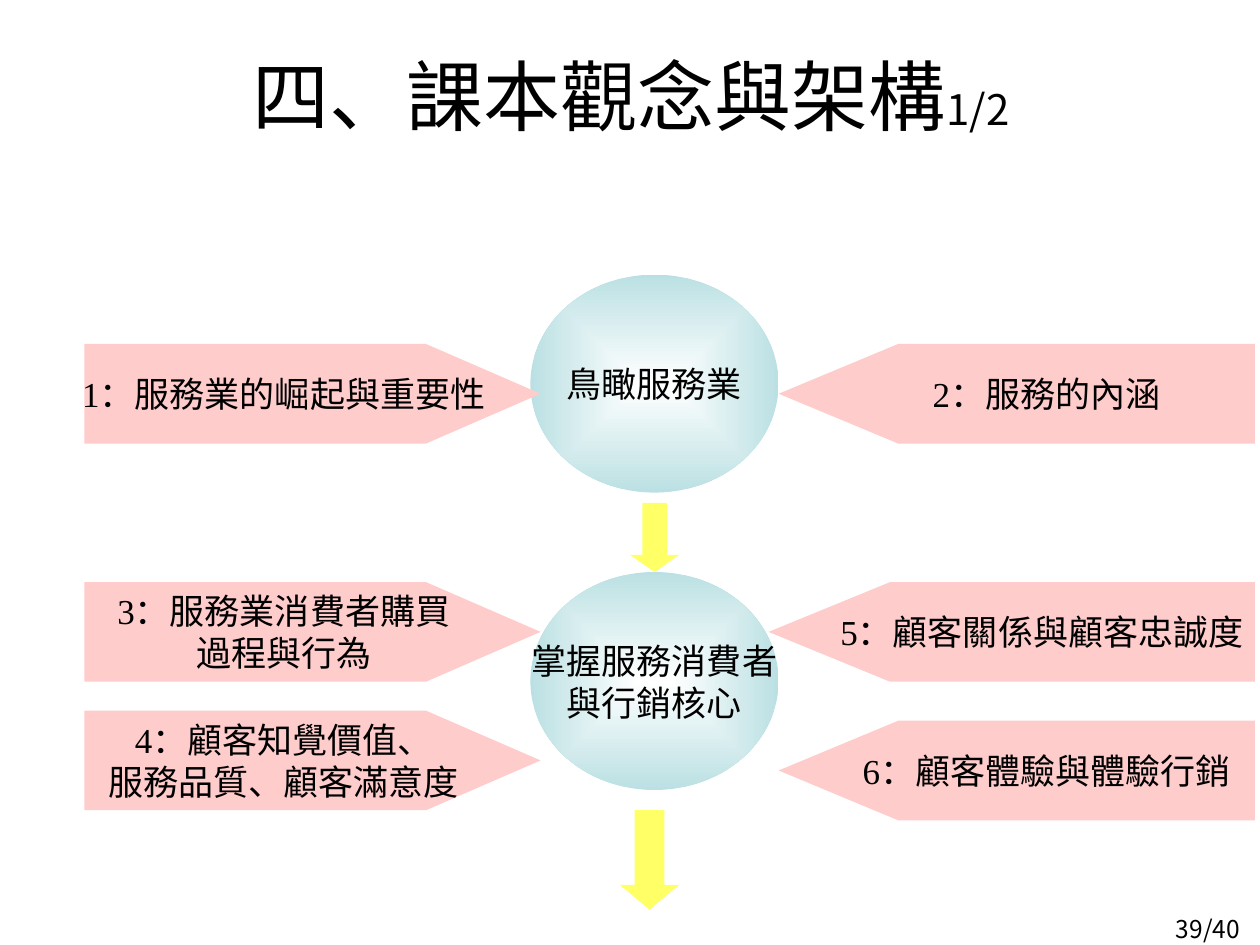
from lxml import etree
from pptx import Presentation
from pptx.dml.color import RGBColor
from pptx.enum.shapes import MSO_SHAPE
from pptx.enum.text import MSO_ANCHOR, PP_ALIGN
from pptx.oxml import parse_xml
from pptx.oxml.ns import nsdecls, qn
from pptx.util import Inches, Pt

ELLIPSE, PLATE, ARROW = MSO_SHAPE.OVAL, MSO_SHAPE.PENTAGON, MSO_SHAPE.DOWN_ARROW
CENTER, RIGHT, MIDDLE = PP_ALIGN.CENTER, PP_ALIGN.RIGHT, MSO_ANCHOR.MIDDLE

COLORS = {"ink": "000000", "core": "FFFFFF", "rim": "BBE0E3",
          "topic": "FFCCCC", "arrow": "FFFF66"}
SANS, SERIF = "Noto Sans CJK TC", "Times New Roman"
CELL = 0.1  # grid of 100 columns by 75 rows, in inches

RADIAL_PATH = (f'<a:path {nsdecls("a")} path="shape">'
               '<a:fillToRect l="50000" t="50000" r="50000" b="50000"/></a:path>')


def color(name):
    return RGBColor.from_string(COLORS[name])


class ConceptSlide:
    def __init__(self, deck):
        self.page = deck.slides.add_slide(deck.slide_layouts[6])

    def fill_text(self, box, lines, align=CENTER, wrap=False, font=SERIF):
        """Fill a box; each line is a list of (text, size) spans."""
        frame = box.text_frame
        for name, value in {"word_wrap": wrap, "vertical_anchor": MIDDLE}.items():
            setattr(frame, name, value)
        for index, spans in enumerate(lines):
            para = frame.add_paragraph() if index else frame.paragraphs[0]
            para.alignment = align
            for text, size in spans:
                span = para.add_run()
                span.text = text
                for name, value in {"name": font, "size": Pt(size)}.items():
                    setattr(span.font, name, value)
                span.font.color.rgb = color("ink")
                east_asian = etree.SubElement(span.font._element, qn("a:ea"))
                east_asian.set("typeface", SANS)

    def text(self, area, spans, align):
        box = self.page.shapes.add_textbox(*[Inches(n * CELL) for n in area])
        self.fill_text(box, [spans], align, wrap=True, font=SANS)

    def shape(self, kind, area, fill, adjustments=()):
        shape = self.page.shapes.add_shape(kind, *[Inches(n * CELL) for n in area])
        shape.shadow.inherit = False
        shape.line.fill.background()
        shape.fill.solid()
        shape.fill.fore_color.rgb = color(fill)
        for index, value in enumerate(adjustments):
            shape.adjustments[index] = value
        return shape

    def circle(self, top, *lines):
        circle = self.shape(ELLIPSE, (42.1, top, 19.7, 17.3), "rim")
        circle.fill.gradient()
        for stop, name in zip(circle.fill.gradient_stops, ("core", "rim")):
            stop.color.rgb = color(name)
        gradient = circle._element.spPr.find(qn("a:gradFill"))
        gradient.replace(gradient.find(qn("a:lin")), parse_xml(RADIAL_PATH))
        self.fill_text(circle, [[(line, 20)] for line in lines])

    def topic(self, left, right, top, point, *lines, flip=False):
        plate = self.shape(PLATE, (left, top, right - left, 7.9), "topic", [point])
        if flip:
            plate._element.spPr.find(qn("a:xfrm")).set("flipH", "1")
        self.fill_text(plate, [[(line, 20)] for line in lines])

    def left_topic(self, top, *lines):
        self.topic(6.7, 42.9, top, 1.15, *lines)

    def right_topic(self, top, line, left=61.8, point=1.2):
        self.topic(left, 99.6, top, point, line, flip=True)

    def arrow(self, area, head):
        self.shape(ARROW, area, "arrow", [0.5, head])


def main():
    deck = Presentation()
    deck.slide_width, deck.slide_height = Inches(10), Inches(7.5)
    slide = ConceptSlide(deck)

    # Page number
    slide.text((91, 72.1, 8.4, 3.2), [("39/40", 14)], RIGHT)

    # Central stages
    slide.circle(21.8, "鳥瞰服務業")
    slide.circle(45.4, "掌握服務消費者", "與行銷核心")

    # Chapters of the first stage
    slide.left_topic(27.3, "1：服務業的崛起與重要性")
    slide.right_topic(27.3, "2：服務的內涵")
    slide.arrow((50, 39.9, 3.9, 5.5), 0.35)

    # Chapters of the second stage
    slide.left_topic(46.2, "3：服務業消費者購買", "過程與行為")
    slide.left_topic(56.4, "4：顧客知覺價值、", "服務品質、顧客滿意度")
    slide.right_topic(46.2, "5：顧客關係與顧客忠誠度", left=61, point=1.22)
    slide.right_topic(57.2, "6：顧客體驗與體驗行銷")
    slide.arrow((49.2, 64.3, 4.7, 7.9), 0.42)

    # Title
    slide.text((5.1, 1.3, 90, 12.5), [("四、課本觀念與架構", 44), ("1/2", 24)], CENTER)

    deck.save("out.pptx")


if __name__ == "__main__":
    main()
